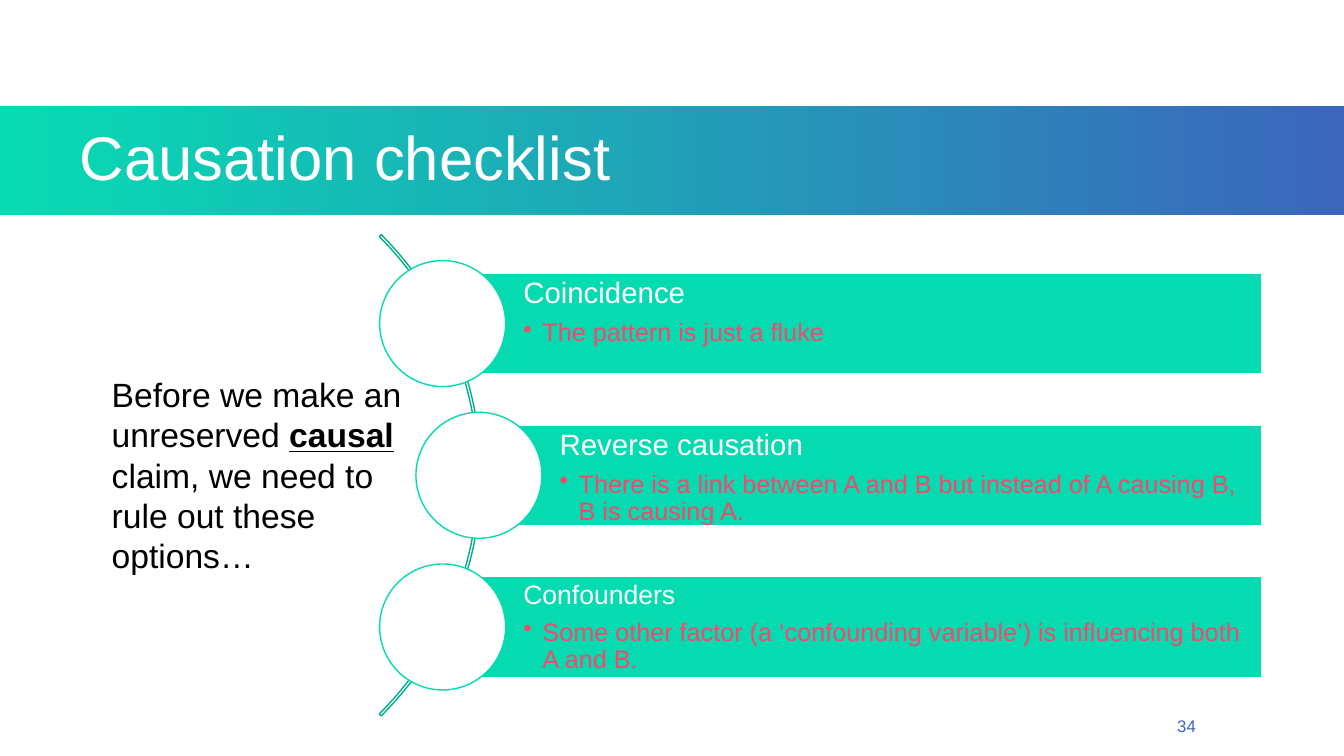
"""Build the causation checklist slide."""
import pptx
import pptx.util
import pptx.dml.color
import pptx.enum.shapes
import pptx.enum.text
import pptx.oxml.ns
from lxml import etree

Inches = pptx.util.Inches
Pt = pptx.util.Pt
SHAPES = pptx.enum.shapes.MSO_SHAPE
ALIGN = pptx.enum.text.PP_ALIGN
ANCHOR = pptx.enum.text.MSO_ANCHOR
COLOURS = {
    "white": "FFFFFF", "black": "000000", "mint": "05DAB0", "arc": "02AD8C",
    "pink": "F9466C", "gradient start": "07DBB3", "blue": "3B66BC",
}


def colour(name):
    return pptx.dml.color.RGBColor.from_string(COLOURS[name])


def style(paragraph, size, name):
    paragraph.font.name = "Arial"
    paragraph.font.size = Pt(size)
    paragraph.font.color.rgb = colour(name)


deck = pptx.Presentation()
deck.slide_width = Inches(13.33)
deck.slide_height = Inches(7.5)
page = deck.slides.add_slide(deck.slide_layouts[5])

title = page.shapes.title
title.left, title.top = Inches(0), Inches(1.05)
title.width, title.height = Inches(13.33), Inches(1.08)
title.fill.gradient()
title.fill.gradient_angle = 0
for stop, position, name in zip(title.fill.gradient_stops, (0, 1), ("gradient start", "blue")):
    stop.position = position
    stop.color.rgb = colour(name)
title.text_frame.text = "Causation checklist"
title.text_frame.auto_size = pptx.enum.text.MSO_AUTO_SIZE.NONE
title.text_frame.vertical_anchor = ANCHOR.MIDDLE
heading = title.text_frame.paragraphs[0]
heading.alignment = ALIGN.LEFT
heading.line_spacing = 0.9
heading._p.get_or_add_pPr().set("marL", str(Inches(0.69)))
style(heading, 44, "white")

number = page.shapes.add_textbox(Inches(8.96), Inches(7.1), Inches(3), Inches(0.25))
number.text_frame.word_wrap = True
number.text_frame.vertical_anchor = ANCHOR.BOTTOM
number.text_frame.text = "34"
number.text_frame.paragraphs[0].alignment = ALIGN.RIGHT
style(number.text_frame.paragraphs[0], 12, "blue")

arc = page.shapes.add_shape(SHAPES.BLOCK_ARC, Inches(-1.98), Inches(1.34), Inches(6.75), Inches(6.75))
arc.shadow.inherit = False
for index, value in enumerate((189, 27, 0.004)):
    arc.adjustments[index] = value
arc.fill.background()
arc.line.color.rgb = colour("arc")
arc.line.width = Pt(1)

checks = [
    ("Coincidence", "The pattern is just a fluke", 4.39, 21, 7.3),
    ("Reverse causation",
     "There is a link between A and B but instead of A causing B, B is causing A.", 4.75, 21, 7.3),
    ("Confounders",
     "Some other factor (a ‘confounding variable’) is influencing both A and B.", 4.39, 19, 6.7),
]
bar_right, circle_size = 12.51, 1.25
for row, (name, detail, left, size, gap) in enumerate(checks):
    top = 2.71 + 1.505 * row
    bar = page.shapes.add_shape(
        SHAPES.RECTANGLE, Inches(left), Inches(top), Inches(bar_right - left), Inches(1))
    circle = page.shapes.add_shape(
        SHAPES.OVAL, Inches(left - circle_size / 2), Inches(top + 0.5 - circle_size / 2),
        Inches(circle_size), Inches(circle_size))
    for shape, fill, line in ((bar, "mint", "white"), (circle, "white", "mint")):
        shape.shadow.inherit = False
        shape.fill.solid()
        shape.fill.fore_color.rgb = colour(fill)
        shape.line.color.rgb = colour(line)
        shape.line.width = Pt(1)

    frame = bar.text_frame
    frame.word_wrap = True
    frame.vertical_anchor = ANCHOR.TOP
    frame.margin_left = Inches(0.8)
    frame.margin_right = frame.margin_top = frame.margin_bottom = Inches(0.05)
    label = frame.paragraphs[0]
    label.text = name
    style(label, size, "white")
    bullet = frame.add_paragraph()
    bullet.text = detail
    bullet.level = 1
    bullet.space_before = Pt(gap)
    for para in frame.paragraphs:
        para.alignment = ALIGN.LEFT
        para.line_spacing = 0.9
    properties = bullet._p.get_or_add_pPr()
    properties.set("marL", str(Inches(0.19)))
    properties.set("indent", str(Inches(-0.19)))
    tint = etree.SubElement(properties, pptx.oxml.ns.qn("a:buClr"))
    etree.SubElement(tint, pptx.oxml.ns.qn("a:srgbClr"), val=COLOURS["pink"])
    etree.SubElement(properties, pptx.oxml.ns.qn("a:buChar"), char="•")
    style(bullet, 18, "pink")

intro = page.shapes.add_textbox(Inches(1.01), Inches(3.66), Inches(3.15), Inches(2.12))
intro.text_frame.word_wrap = True
intro.text_frame.auto_size = pptx.enum.text.MSO_AUTO_SIZE.SHAPE_TO_FIT_TEXT
para = intro.text_frame.paragraphs[0]
style(para, 24, "black")
for words, strong in (("Before we make an unreserved ", False), ("causal", True),
                      (" claim, we need to rule out these options…", False)):
    span = para.add_run()
    span.text = words
    if strong:
        span.font.bold = True
        span.font.underline = True

deck.save("out.pptx")
